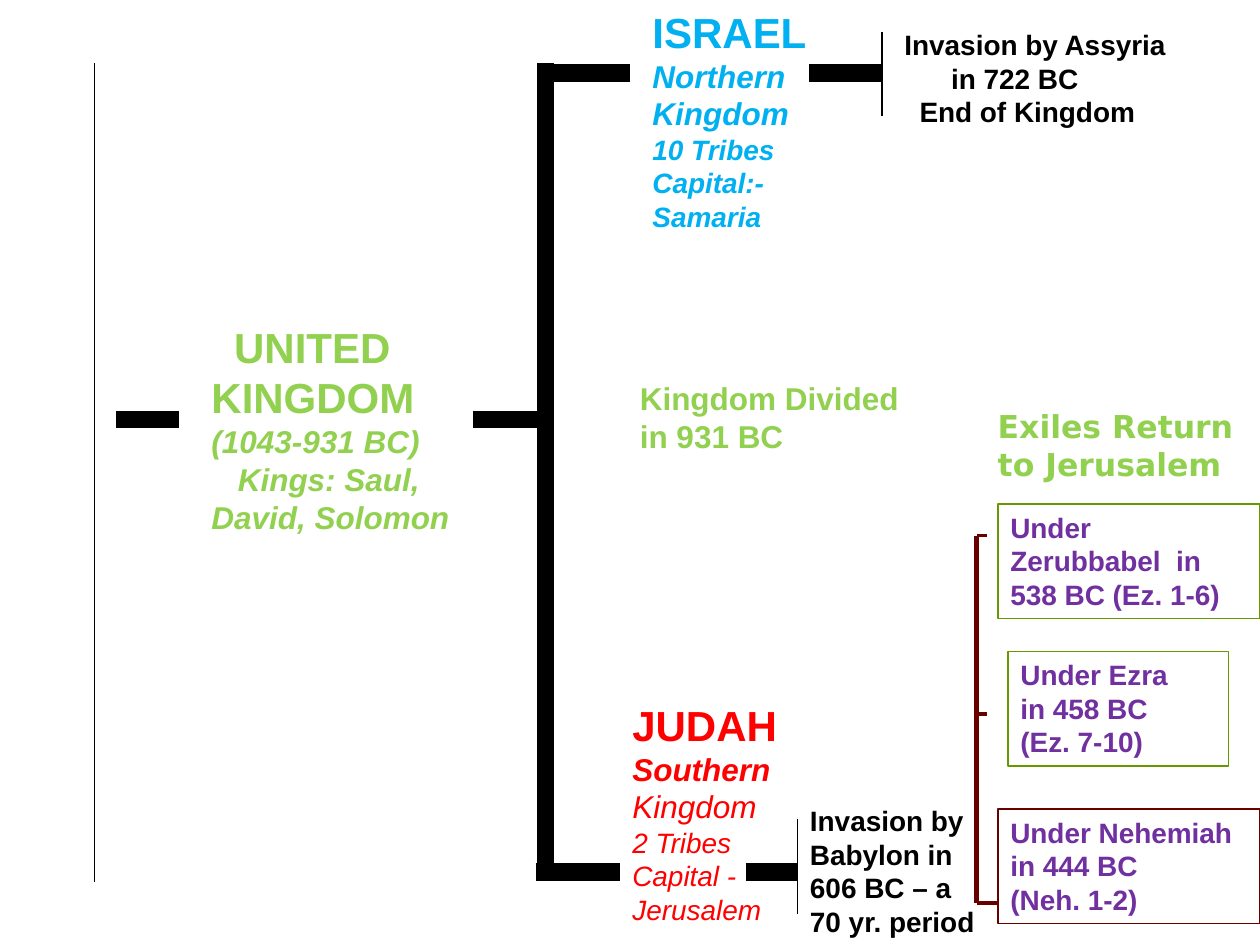
from pptx import Presentation, util as u
from pptx.dml.color import RGBColor
from pptx.enum import shapes, text as t
from pptx.oxml.ns import qn
from lxml import etree


class Theme:
    black = "000000"
    green = "92D050"
    blue = "00B0F0"
    red = "FF0000"
    purple = "7030A0"
    maroon = "680000"
    olive = "669900"
    font = "Arial"
    wide = "DejaVu Sans"
    head = 24
    mid = 18
    small = 16


def write(box, text, size=Theme.small, color=Theme.black, bold=True,
          italic=False, font=Theme.font, indent=0, join=False):
    frame = box.text_frame
    for line in text.split("\n"):
        para = frame.paragraphs[-1]
        if para.runs and not join:
            para = frame.add_paragraph()
        para.alignment = t.PP_ALIGN.LEFT
        if indent:
            para._p.get_or_add_pPr().set("indent", str(u.Inches(indent)))
        run = para.add_run()
        run.text = line
        face = run.font
        face.name, face.size = font, u.Pt(size)
        face.bold, face.italic = bold, italic
        face.color.rgb = RGBColor.from_string(color)


def place(left, top, width, height, edge=None, wrap=True):
    area = [u.Inches(n) for n in (left, top, width, height)]
    if edge:
        box = slide.shapes.add_shape(shapes.MSO_SHAPE.RECTANGLE, *area)
        box.shadow.inherit = False
        box.fill.background()
        box.line.color.rgb = RGBColor.from_string(edge)
        box.line.width = u.Pt(0.75)
    else:
        box = slide.shapes.add_textbox(*area)
    frame = box.text_frame
    frame.word_wrap = wrap
    frame.vertical_anchor = t.MSO_ANCHOR.TOP
    frame.auto_size = t.MSO_AUTO_SIZE.SHAPE_TO_FIT_TEXT
    return box


deck = Presentation()
deck.slide_width, deck.slide_height = u.Inches(10), u.Inches(7.5)
slide = deck.slides.add_slide(deck.slide_layouts[6])

lines = [
    (Theme.black, 0.75, [
        (0.75, 0.5, 0.75, 7), (7, 0.25, 7, 0.92), (6.33, 6.5, 6.33, 7.25)]),
    (Theme.black, 10, [
        (0.92, 3.33, 1.42, 3.33), (3.75, 3.33, 4.33, 3.33),
        (4.33, 3.5, 4.33, 0.5), (4.33, 3.33, 4.33, 6.92),
        (4.33, 0.58, 5, 0.58), (4.25, 6.92, 4.92, 6.92),
        (5.92, 6.92, 6.33, 6.92), (6.42, 0.58, 7, 0.58)]),
    (Theme.maroon, 3, [(7.75, 4.25, 7.75, 7.17)]),
    (Theme.maroon, 2.25, [
        (7.75, 4.25, 7.83, 4.25), (7.75, 5.67, 7.83, 5.67),
        (7.75, 7.17, 7.92, 7.17)]),
]
for color, weight, spans in lines:
    for span in spans:
        line = slide.shapes.add_connector(
            shapes.MSO_CONNECTOR.STRAIGHT, *[u.Inches(n) for n in span])
        line.line.color.rgb = RGBColor.from_string(color)
        line.line.width = u.Pt(weight)
        etree.SubElement(line._element.spPr, qn("a:effectLst"))

union = place(1.58, 2.5, 2.17, 1.8)
write(union, "UNITED", size=Theme.head, color=Theme.green, indent=0.18)
write(union, "KINGDOM", size=Theme.head, color=Theme.green)
write(union, "(1043-931 BC)", size=Theme.mid, color=Theme.green, italic=True)
write(union, "Kings: Saul, David, Solomon", size=Theme.mid,
      color=Theme.green, italic=True, indent=0.21)

judah = place(4.92, 5.5, 1.42, 1.9)
write(judah, "JUDAH", size=Theme.head, color=Theme.red)
write(judah, "Southern", size=Theme.mid, color=Theme.red, italic=True)
write(judah, " Kingdom", size=Theme.mid, color=Theme.red, bold=False,
      italic=True, join=True)
write(judah, "2 Tribes\nCapital -\nJerusalem", color=Theme.red, bold=False,
      italic=True)

israel = place(5.08, 0, 1.58, 1.9)
write(israel, "ISRAEL", size=Theme.head, color=Theme.blue)
write(israel, "Northern\nKingdom", size=Theme.mid, color=Theme.blue,
      italic=True)
write(israel, "10 Tribes\nCapital:- Samaria", color=Theme.blue, italic=True)

north = place(7.08, 0.17, 2.5, 0.9)
write(north, "Invasion by Assyria")
write(north, "in 722 BC", indent=0.37)
write(north, "End of Kingdom", indent=0.12)

south = place(6.33, 6.33, 1.58, 1.17)
write(south, "Invasion by\nBabylon in\n606 BC – a 70 yr. period")

exiles = place(7.82, 3.18, 2.18, 0.7)
write(exiles, "Exiles Return\nto Jerusalem", size=Theme.mid,
      color=Theme.green, font=Theme.wide)

returns = [
    (7.92, 4, 2.08, Theme.olive, "Under Zerubbabel  in  538 BC (Ez. 1-6)"),
    (8, 5.17, 1.75, Theme.olive, "Under Ezra\nin 458 BC\n(Ez. 7-10)"),
    (7.92, 6.42, 2.08, Theme.maroon, "Under Nehemiah\nin 444 BC\n(Neh. 1-2)"),
]
for left, top, width, edge, label in returns:
    write(place(left, top, width, 0.91, edge=edge), label, color=Theme.purple)

split = place(4.98, 2.96, 2.26, 0.7, wrap=False)
write(split, "Kingdom Divided\nin 931 BC", size=Theme.mid, color=Theme.green)

deck.save("out.pptx")
